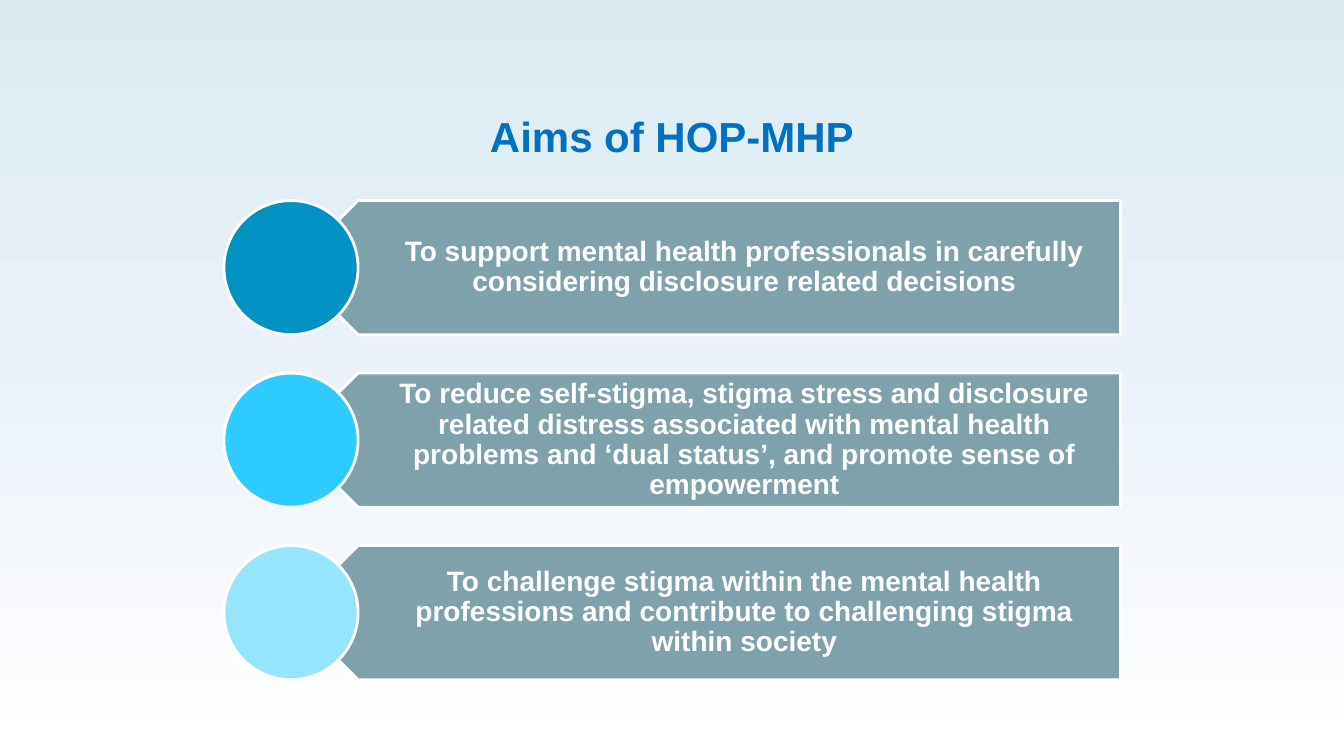
from copy import deepcopy
from dataclasses import dataclass

from pptx import Presentation
from pptx.dml.color import RGBColor
from pptx.enum.shapes import MSO_SHAPE
from pptx.enum.text import MSO_ANCHOR, MSO_AUTO_SIZE, PP_ALIGN
from pptx.oxml.ns import qn
from pptx.util import Pt


@dataclass(frozen=True)
class Theme:
    face: str = "Arial"
    head: int = 30
    body: int = 20
    blue: str = "0070C0"
    grey: str = "7FA1AC"
    white: str = "FFFFFF"
    sky: tuple = ((0, "DAEBF2"), (0.46, "EAF1FA"), (1, "FFFFFF"))
    dots: tuple = ("0092C2", "2DCBFF", "96E5FF")


THEME = Theme()
AIMS = (
    "To support mental health professionals in carefully considering disclosure related decisions",
    "To reduce self-stigma, stigma stress and disclosure related distress associated with "
    "mental health problems and ‘dual status’, and promote sense of empowerment",
    "To challenge stigma within the mental health professions and contribute to "
    "challenging stigma within society",
)


def apply(item, values):
    for name, value in values.items():
        setattr(item, name, value)


def write(shape, text, size, color, pads, spacing):
    frame = shape.text_frame
    frame.text = text
    left, top, right, bottom = map(Pt, pads)
    apply(frame, dict(word_wrap=True, auto_size=MSO_AUTO_SIZE.NONE,
                      vertical_anchor=MSO_ANCHOR.MIDDLE,
                      margin_left=left, margin_top=top,
                      margin_right=right, margin_bottom=bottom))
    line = frame.paragraphs[0]
    apply(line, dict(alignment=PP_ALIGN.CENTER, line_spacing=spacing))
    apply(line.font, dict(name=THEME.face, size=Pt(size), bold=True))
    line.font.color.rgb = RGBColor.from_string(color)


def paint(shape, color):
    shape.shadow.inherit = False
    shape.fill.solid()
    shape.fill.fore_color.rgb = RGBColor.from_string(color)
    shape.line.color.rgb = RGBColor.from_string(THEME.white)
    shape.line.width = Pt(2)


def draw_sky(slide):
    fill = slide.background.fill
    fill.gradient()
    fill.gradient_angle = 270
    stops = next(slide.element.iter(qn("a:gsLst")))
    stops.insert(1, deepcopy(stops[0]))
    for stop, (place, color) in zip(fill.gradient_stops, THEME.sky):
        stop.position = place
        stop.color.rgb = RGBColor.from_string(color)


def draw_title(slide, left, top, width, height):
    title = slide.shapes.title
    apply(title, dict(left=Pt(left), top=Pt(top), width=Pt(width), height=Pt(height)))
    write(title, "Aims of HOP-MHP", THEME.head, THEME.blue, (7.2, 3.6, 7.2, 3.6), 1)


def draw_aim(slide, left, top, width, height, text, color):
    tip, neck, right = left + height / 2, left + height, left + width
    path = [(right, top + height), (neck, top + height), (tip, top + height / 2),
            (neck, top), (right, top)]
    points = [(Pt(x), Pt(y)) for x, y in path]
    form = slide.shapes.build_freeform(*points[0])
    form.add_line_segments(points[1:], close=True)
    arrow = form.convert_to_shape()
    paint(arrow, THEME.grey)
    write(arrow, text, THEME.body, THEME.white, (66.3, 6, 11.2, 6), 0.9)
    dot = slide.shapes.add_shape(MSO_SHAPE.OVAL, Pt(left), Pt(top), Pt(height), Pt(height))
    paint(dot, color)


def draw_aims(slide, left, top, width, height):
    size = 95.8
    step = (height - size) / (len(AIMS) - 1)
    for row, (text, color) in enumerate(zip(AIMS, THEME.dots)):
        draw_aim(slide, left, top + row * step, width, size, text, color)


def main():
    deck = Presentation()
    apply(deck, dict(slide_width=Pt(960), slide_height=Pt(540)))
    slide = deck.slides.add_slide(deck.slide_layouts[5])
    draw_sky(slide)
    draw_aims(slide, 160, 143.3, 640.5, 342.2)
    draw_title(slide, 146, 71.3, 668, 51)
    deck.save("out.pptx")


if __name__ == "__main__":
    main()
